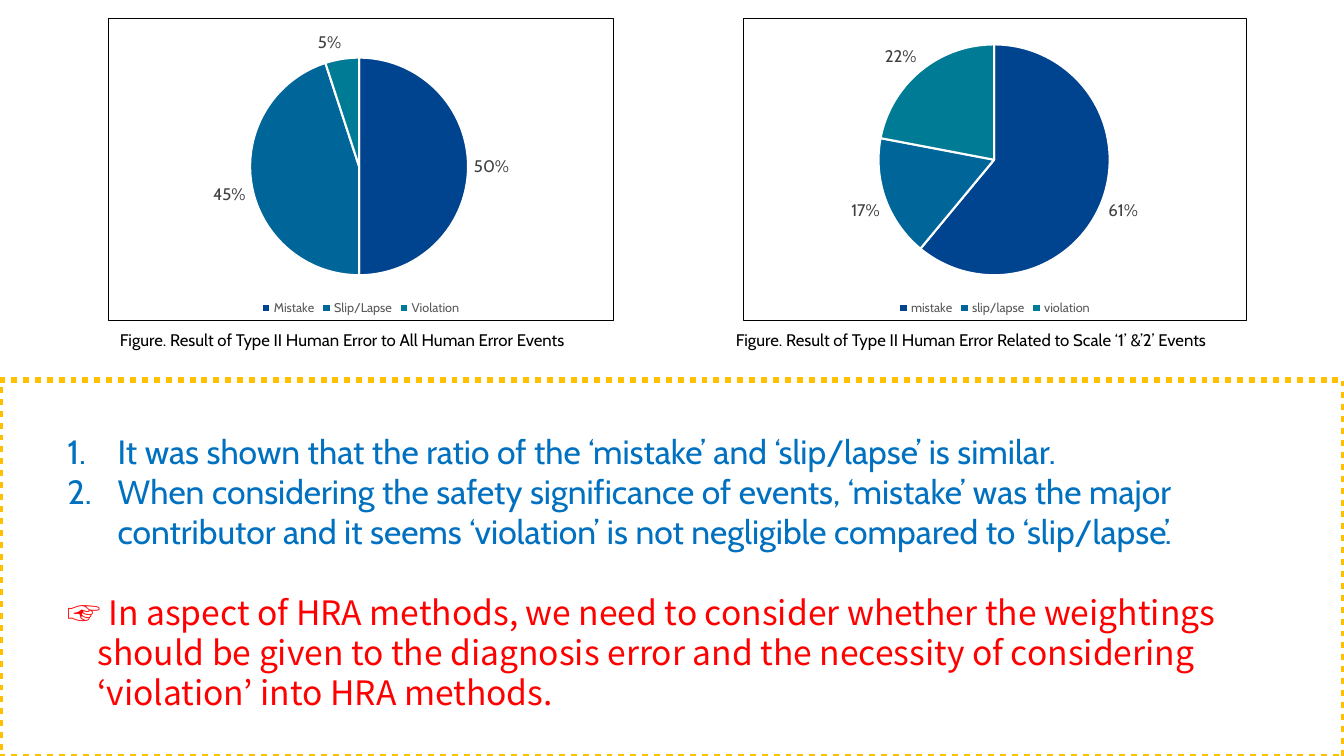
from lxml import etree
from pptx import Presentation
from pptx.chart.data import CategoryChartData
from pptx.dml.color import RGBColor
from pptx.enum.chart import XL_CHART_TYPE, XL_LABEL_POSITION, XL_LEGEND_POSITION
from pptx.enum.dml import MSO_LINE
from pptx.enum.shapes import MSO_SHAPE
from pptx.oxml import parse_xml
from pptx.oxml.ns import nsdecls, qn
from pptx.util import Pt

BLACK = RGBColor(0x00, 0x00, 0x00)
WHITE = RGBColor(0xFF, 0xFF, 0xFF)
GOLD = RGBColor(0xFF, 0xC0, 0x00)
BLUE = RGBColor(0x00, 0x70, 0xC0)
RED = RGBColor(0xFF, 0x00, 0x00)
LEGEND_GREY = RGBColor(0x59, 0x59, 0x59)
LABEL_GREY = RGBColor(0x40, 0x40, 0x40)
SLICE_COLOURS = [RGBColor(0x00, 0x43, 0x8F), RGBColor(0x00, 0x66, 0x99), RGBColor(0x00, 0x7B, 0x96)]

LATIN, CJK = "Cabin", "Noto Sans CJK KR"
LINE_PITCH = 28.8

FINDINGS = [
    "It was shown that the ratio of the ‘mistake’ and ‘slip/lapse’ is similar.",
    "When considering the safety significance of events, ‘mistake’ was the major contributor "
    "and it seems ‘violation’ is not negligible compared to ‘slip/lapse’.",
]
IMPLICATION = (
    "☞ In aspect of HRA methods, we need to consider whether the weightings should be given "
    "to the diagnosis error and the necessity of considering ‘violation’ into HRA methods."
)


def style_font(font, size, colour, name=LATIN):
    """Give a font its size, typeface and colour."""
    for attribute, value in {"size": Pt(size), "name": name, "bold": False}.items():
        setattr(font, attribute, value)
    font.color.rgb = colour


def add_text(slide, left, top, width, height):
    """Add a wrapping text box and return its text frame."""
    frame = slide.shapes.add_textbox(Pt(left), Pt(top), Pt(width), Pt(height)).text_frame
    frame.word_wrap = True
    return frame


def add_pie_figure(slide, left, top, width, height, shares, caption, caption_left, caption_width):
    """Draw a framed pie chart with its caption underneath."""
    error_data = CategoryChartData()
    error_data.categories = list(shares)
    error_data.add_series("Series 1", list(shares.values()))
    pie = slide.shapes.add_chart(
        XL_CHART_TYPE.PIE, Pt(left), Pt(top), Pt(width), Pt(height), error_data
    ).chart
    style_font(pie.font, 10, BLACK)
    pie.has_title = False
    pie.has_legend = True
    pie.legend.position = XL_LEGEND_POSITION.BOTTOM
    pie.legend.include_in_layout = False
    style_font(pie.legend.font, 9, LEGEND_GREY)

    plot = pie.plots[0]
    plot.vary_by_categories = True
    for index, colour in enumerate(SLICE_COLOURS):
        slice_format = plot.series[0].points[index].format
        slice_format.fill.solid()
        slice_format.fill.fore_color.rgb = colour
        slice_format.line.color.rgb = WHITE
        slice_format.line.width = Pt(1.5)

    plot.has_data_labels = True
    labels = plot.data_labels
    label_format = {
        "show_percentage": True,
        "show_value": False,
        "number_format": "0%",
        "number_format_is_linked": False,
        "position": XL_LABEL_POSITION.OUTSIDE_END,
    }
    for attribute, value in label_format.items():
        setattr(labels, attribute, value)
    style_font(labels.font, 12, LABEL_GREY)

    frame = parse_xml(
        f'<c:spPr {nsdecls("c", "a")}><a:solidFill><a:srgbClr val="{WHITE}"/></a:solidFill>'
        f'<a:ln w="{Pt(0.75)}"><a:solidFill><a:srgbClr val="{BLACK}"/></a:solidFill></a:ln></c:spPr>'
    )
    pie.element.find(qn("c:txPr")).addprevious(frame)

    caption_line = add_text(slide, caption_left, top + height + 2.8, caption_width, 21.6).paragraphs[0]
    caption_line.text = caption
    style_font(caption_line.runs[0].font, 12, BLACK)


def add_conclusion_panel(slide, left, top, width, height):
    """Draw the dotted panel with the numbered findings and the implication."""
    panel = slide.shapes.add_shape(MSO_SHAPE.RECTANGLE, Pt(left), Pt(top), Pt(width), Pt(height))
    panel.shadow.inherit = False
    panel.fill.solid()
    panel.fill.fore_color.rgb = WHITE
    panel.line.color.rgb = GOLD
    panel.line.width = Pt(4.25)
    panel.line.dash_style = MSO_LINE.ROUND_DOT

    conclusions = add_text(slide, left + 41, top + 32.4, width - 88, height - 58.3)
    entries = [(finding, 36, BLUE, LATIN) for finding in FINDINGS] + [(IMPLICATION, 21.5, RED, CJK)]
    for index, (wording, indent, colour, typeface) in enumerate(entries):
        entry = conclusions.add_paragraph() if index else conclusions.paragraphs[0]
        properties = entry._p.get_or_add_pPr()
        properties.set("marL", str(Pt(indent)))
        properties.set("indent", str(-Pt(indent)))
        entry.line_spacing = Pt(LINE_PITCH)
        if wording == IMPLICATION:
            entry.space_before = Pt(LINE_PITCH)
        else:
            etree.SubElement(properties, qn("a:buFont")).set("typeface", "+mj-lt")
            etree.SubElement(properties, qn("a:buAutoNum")).set("type", "arabicPeriod")
        run = entry.add_run()
        run.text = wording
        style_font(run.font, 24, colour, typeface)
        if typeface == CJK:
            for script in ("a:ea", "a:sym"):
                etree.SubElement(run.font._element, qn(script)).set("typeface", CJK)
            latin = run.font._element.find(qn("a:latin"))
            latin.addnext(run.font._element.find(qn("a:ea")))


def main():
    """Build the slide and save it."""
    deck = Presentation()
    deck.slide_width, deck.slide_height = Pt(960), Pt(540)
    slide = deck.slides.add_slide(deck.slide_layouts[6])
    add_pie_figure(
        slide, 77, 13, 361.5, 216, {"Mistake": 50, "Slip/Lapse": 45, "Violation": 5},
        "Figure. Result of Type II Human Error to All Human Error Events", 78.5, 361,
    )
    add_pie_figure(
        slide, 530.5, 13, 360, 216, {"mistake": 61, "slip/lapse": 17, "violation": 22},
        "Figure. Result of Type II Human Error Related to Scale ‘1’ &’2’ Events", 518.5, 385,
    )
    add_conclusion_panel(slide, 0, 271.5, 960, 269)
    deck.save("out.pptx")


if __name__ == "__main__":
    main()
